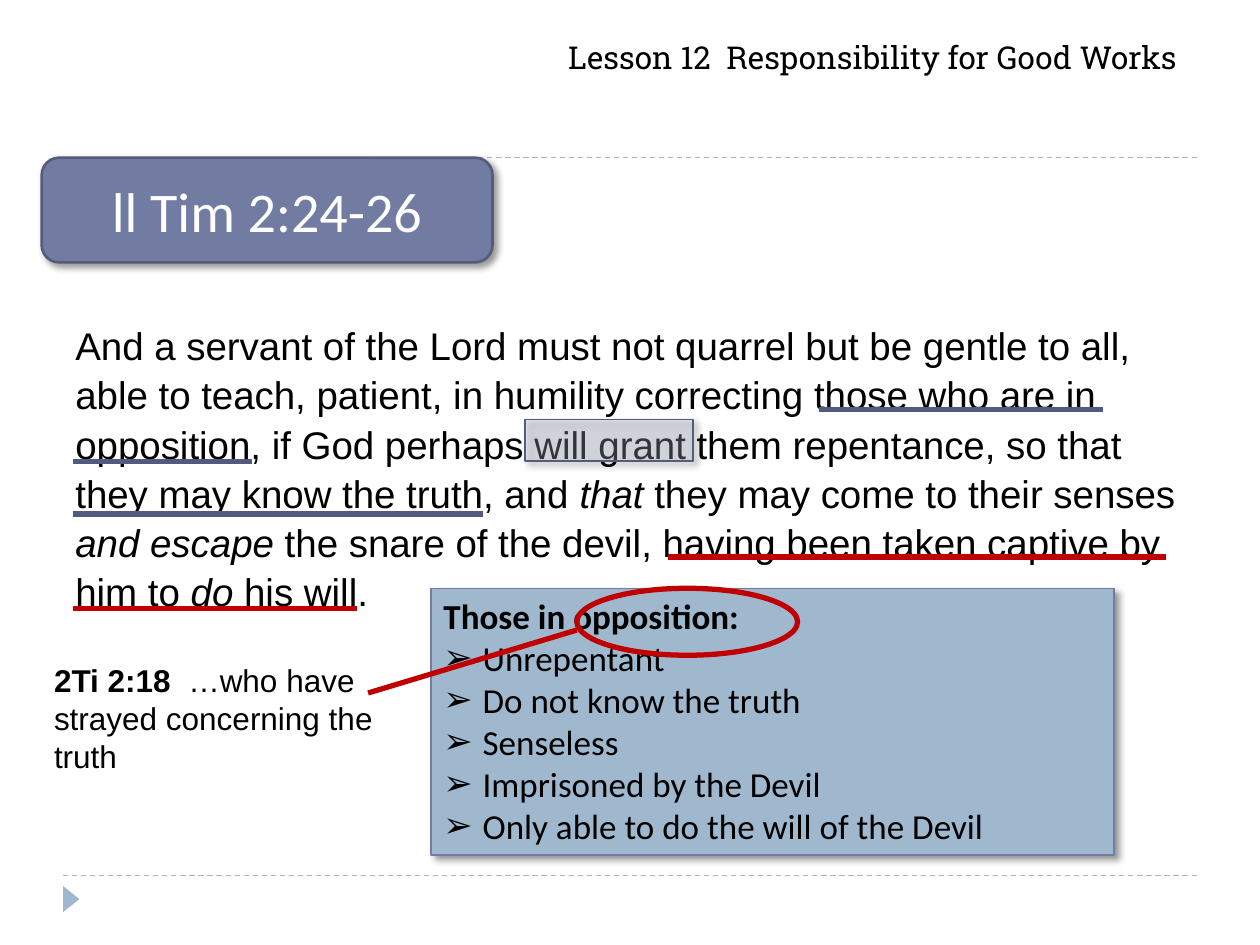
from lxml import etree
from pptx import Presentation
from pptx.dml.color import RGBColor
from pptx.enum import dml, shapes, text
from pptx.oxml import ns
from pptx.util import Cm, Pt

COLORS = {
    "black": "000000",
    "white": "FFFFFF",
    "pale_blue": "9FB8CD",
    "slate": "727CA3",
    "slate_edge": "545C79",
    "underline": "525B7E",
    "highlight": "AAB0C8",
    "red": "C00000",
}
RGB = {name: RGBColor.from_string(value) for name, value in COLORS.items()}


def add_line(x1, y1, x2, y2, color, width):
    """Draw a straight line, in centimetres, without the theme's shadow."""
    line = s.shapes.add_connector(
        shapes.MSO_CONNECTOR.STRAIGHT, Cm(x1), Cm(y1), Cm(x2), Cm(y2))
    line.line.color.rgb = RGB[color]
    line.line.width = Pt(width)
    etree.SubElement(line._element.spPr, ns.qn("a:effectLst"))
    return line


def add_runs(p, parts, font, size, color="black"):
    """Fill a paragraph from (text, bold, italic) parts."""
    for words, bold, italic in parts:
        r = p.add_run()
        r.text = words
        r.font.name, r.font.size = font, Pt(size)
        r.font.bold, r.font.italic = bold, italic
        r.font.color.rgb = RGB[color]


prs = Presentation()
prs.slide_width, prs.slide_height = Cm(25.4), Cm(19.05)
s = prs.slides.add_slide(prs.slide_layouts.get_by_name("Title Only"))

# Page frame: two dashed rules and a corner marker
for y in (17.65, 3.18):
    rule = add_line(1.27, y, 24.13, y, "pale_blue", 0.75)
    rule.line.dash_style = dml.MSO_LINE.DASH
marker = s.shapes.add_shape(
    shapes.MSO_SHAPE.ISOSCELES_TRIANGLE, Cm(1.17), Cm(17.96), Cm(0.53), Cm(0.33))
marker.rotation = 90
marker.shadow.inherit = False
marker.fill.solid()
marker.fill.fore_color.rgb = RGB["pale_blue"]
marker.line.fill.background()

# Lesson title
title = s.shapes.title
title.left, title.top, title.width, title.height = Cm(11.2), Cm(0.64), Cm(13.56), Cm(1.02)
tf = title.text_frame
tf.auto_size = text.MSO_AUTO_SIZE.NONE
tf.vertical_anchor = text.MSO_ANCHOR.TOP
tf.paragraphs[0].alignment = text.PP_ALIGN.LEFT
add_runs(tf.paragraphs[0], [("Lesson 12  Responsibility for Good Works", False, False)],
         "Roboto Slab", 18)

# Verse and side reference
verse = [
    ("And a servant of the Lord must not quarrel but be gentle to all, able to teach, "
     "patient, in humility correcting those who are in opposition, if God perhaps will "
     "grant them repentance, so that they may know the truth, and ", False, False),
    ("that", False, True),
    (" they may come to their senses ", False, False),
    ("and escape", False, True),
    (" the snare of the devil, having been taken captive by him to ", False, False),
    ("do", False, True),
    (" his will.", False, False),
]
reference = [("2Ti 2:18  ", True, False),
             ("…who have strayed concerning the truth", False, False)]
for box, parts, size, spacing in (
    ((1.27, 6.32, 22.86, 7.01), verse, 22, Pt(28)),
    ((0.84, 13.21, 6.99, 2.57), reference, 18, None),
):
    tf = s.shapes.add_textbox(*map(Cm, box)).text_frame
    tf.word_wrap = True
    tf.paragraphs[0].line_spacing = spacing
    add_runs(tf.paragraphs[0], parts, "Arial", size)

# Underlined phrases
for x1, x2, y, color in (
    (16.51, 22.23, 8.26, "underline"),
    (1.47, 5.08, 9.3, "underline"),
    (1.47, 9.73, 10.36, "underline"),
    (13.46, 23.5, 11.23, "red"),
    (1.47, 7.19, 12.27, "red"),
):
    add_line(x1, y, x2, y, color, 3)

# Shadowed boxes: highlight, verse label and panel
boxes = []
for kind, box, fill, edge, width in (
    (shapes.MSO_SHAPE.RECTANGLE, (10.59, 8.46, 3.38, 0.84), "highlight", "slate_edge", 1),
    (shapes.MSO_SHAPE.ROUNDED_RECTANGLE, (0.84, 3.18, 9.09, 2.11), "slate", "slate_edge", 1.5),
    (shapes.MSO_SHAPE.RECTANGLE, (8.69, 11.86, 13.77, 5.38), "pale_blue", "slate", 0.75),
):
    sp = s.shapes.add_shape(kind, *map(Cm, box))
    sp.fill.solid()
    sp.fill.fore_color.rgb = RGB[fill]
    sp.line.color.rgb = RGB[edge]
    sp.line.width = Pt(width)
    sp.shadow.inherit = False
    shadow = etree.SubElement(
        sp._element.spPr.find(ns.qn("a:effectLst")), ns.qn("a:outerShdw"),
        blurRad=str(Pt(4)), dist=str(Pt(3)), dir="2700000", algn="tl", rotWithShape="0")
    shade = etree.SubElement(shadow, ns.qn("a:srgbClr"), val=COLORS["black"])
    etree.SubElement(shade, ns.qn("a:alpha"), val="40000")
    boxes.append(sp)
highlight, label, panel = boxes

tint = highlight._element.spPr.find(ns.qn("a:solidFill"))[0]
etree.SubElement(tint, ns.qn("a:alpha"), val="30000")

p = label.text_frame.paragraphs[0]
p.alignment = text.PP_ALIGN.CENTER
add_runs(p, [("ll Tim 2:24-26", False, False)], "Calibri", 32, "white")

tf = panel.text_frame
tf.word_wrap = True
tf.vertical_anchor = text.MSO_ANCHOR.TOP
p = tf.paragraphs[0]
p.alignment = text.PP_ALIGN.LEFT
add_runs(p, [("Those in opposition:", True, False)], "Calibri", 20)
for trait in ("Unrepentant", "Do not know the truth", "Senseless",
              "Imprisoned by the Devil", "Only able to do the will of the Devil"):
    p = tf.add_paragraph()
    p.alignment = text.PP_ALIGN.LEFT
    add_runs(p, [(trait, False, False)], "Calibri", 20)
    props = p._p.get_or_add_pPr()
    props.set("marL", str(Cm(0.79)))
    props.set("indent", str(-Cm(0.79)))
    etree.SubElement(props, ns.qn("a:buFont"), typeface="Arial")
    etree.SubElement(props, ns.qn("a:buChar"), char="➢")

# Ring around "opposition" and its pointer to the side reference
ring = s.shapes.add_shape(
    shapes.MSO_SHAPE.OVAL, Cm(11.63), Cm(11.86), Cm(4.45), Cm(1.35))
ring.shadow.inherit = False
ring.fill.background()
ring.line.color.rgb = RGB["red"]
ring.line.width = Pt(3)
add_line(11.63, 12.7, 7.42, 13.97, "red", 3)

prs.save("out.pptx")
